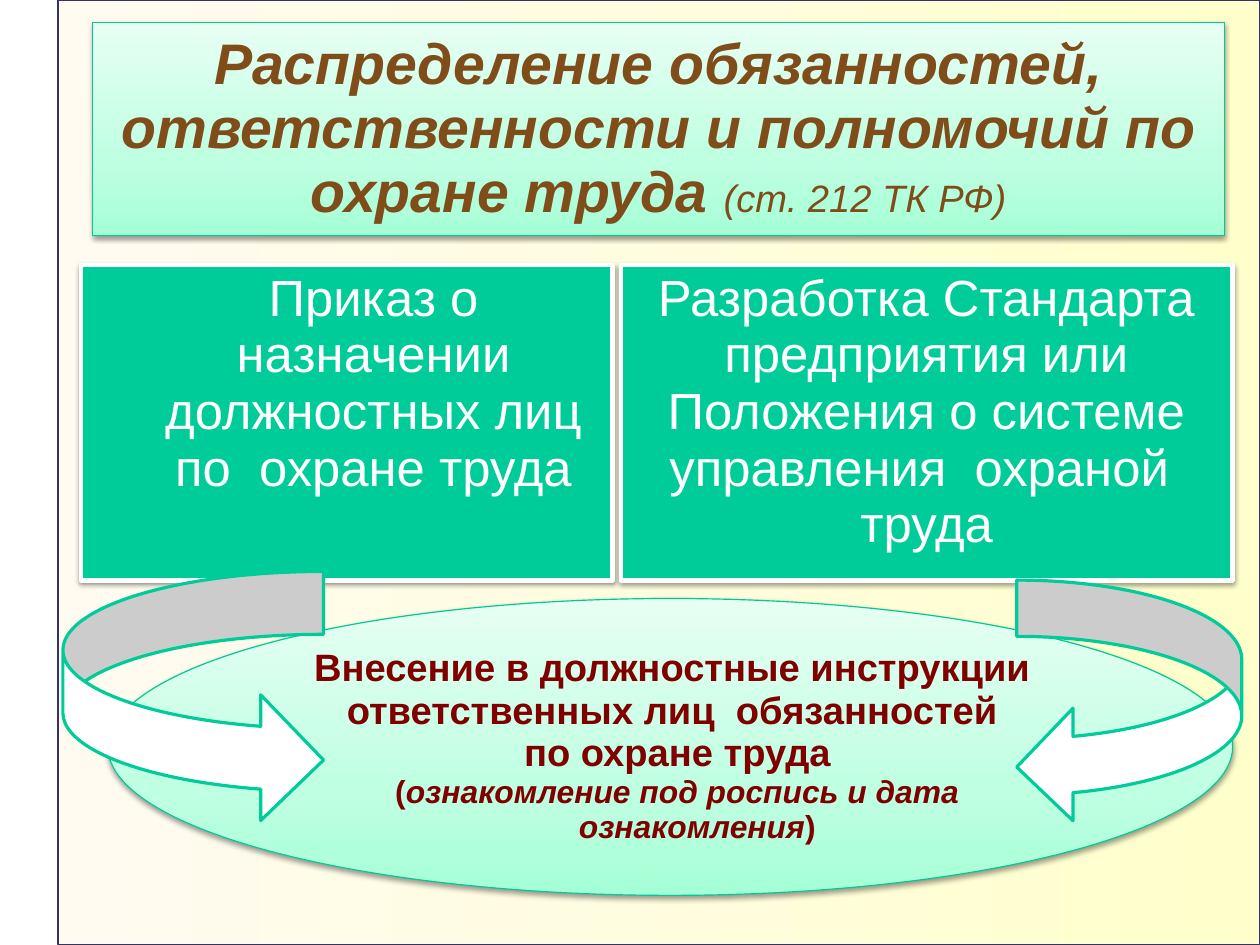
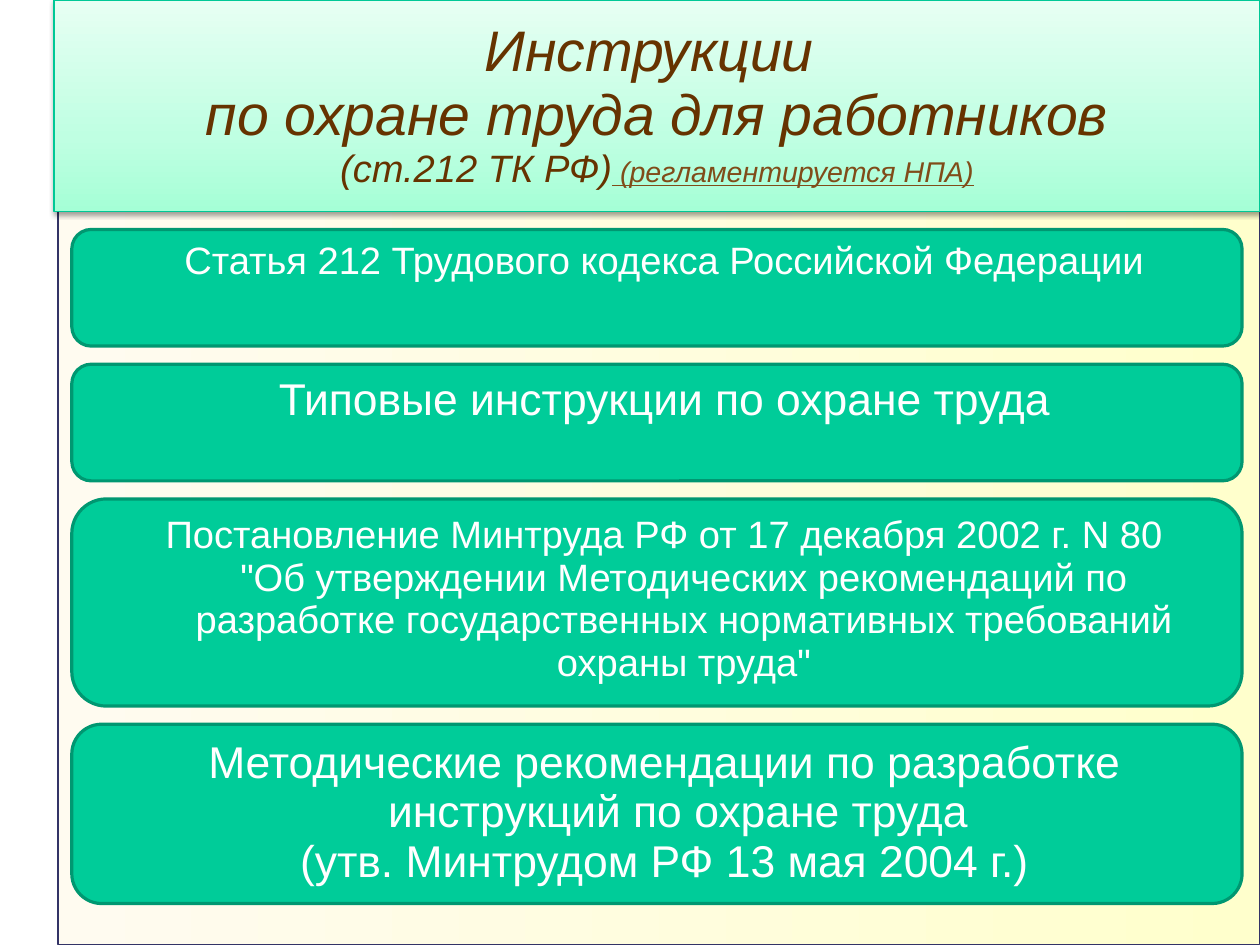
from dataclasses import dataclass

from lxml.etree import SubElement
from pptx import Presentation
from pptx.dml.color import RGBColor
from pptx.enum.shapes import MSO_SHAPE as Shape
from pptx.enum.text import MSO_ANCHOR as Anchor, MSO_AUTO_SIZE as AutoSize, PP_ALIGN as Align
from pptx.oxml.ns import qn
from pptx.util import Pt

SLIDE_WIDTH, SLIDE_HEIGHT = 793.7, 595.28
FONT = "Arial"
LINE_SPACING = 0.93
GREEN, DARK_GREEN, MINT_EDGE = "00CC99", "009771", "00C896"
WHITE, NAVY, MAROON = "FFFFFF", "333366", "800000"
BROWN, DARK_BROWN = "804C19", "663300"
MINT = [(0, "A5FFD6"), (35, "BFFFE2"), (100, "E7FFF3")]
CREAM = [(0, "FFFBF0"), (100, "FFFFCC")]
HANGING = (34, -25)


@dataclass(frozen=True)
class Run:
    text: str
    size: float
    color: str
    bold: bool = False
    italic: bool = False
    underline: bool = False


def rgb(color):
    return RGBColor.from_string(color)


def place(shape, left, top, width, height):
    shape.left, shape.top = Pt(left), Pt(top)
    shape.width, shape.height = Pt(width), Pt(height)


def fill_gradient(shape, stops, angle):
    """Fill with (percent, colour) stops; the angle runs counter-clockwise."""
    shape.fill.gradient()
    shape.fill.gradient_angle = angle
    stop_list = next(shape.element.iter(qn("a:gsLst")))
    for old_stop in list(stop_list):
        stop_list.remove(old_stop)
    for percent, color in stops:
        stop = SubElement(stop_list, qn("a:gs"), pos=str(percent * 1000))
        SubElement(stop, qn("a:srgbClr"), val=color)


def outline(shape, color, width):
    shape.line.color.rgb = rgb(color)
    shape.line.width = Pt(width)


def cast_shadow(shape):
    shape.shadow.inherit = False
    effects = next(shape.element.iter(qn("a:effectLst")))
    shadow = SubElement(effects, qn("a:outerShdw"), blurRad=str(Pt(3.1)),
                        dist=str(Pt(1.6)), dir="5400000", rotWithShape="0")
    black = SubElement(shadow, qn("a:srgbClr"), val="000000")
    SubElement(black, qn("a:alpha"), val="38000")


def style_mint(shape):
    fill_gradient(shape, MINT, 90)
    outline(shape, MINT_EDGE, 0.75)
    cast_shadow(shape)


def add_run(paragraph, run):
    for index, line in enumerate(run.text.split("\n")):
        if index:
            paragraph.add_line_break()
        if not line:
            continue
        part = paragraph.add_run()
        part.text = line
        font = part.font
        font.name, font.size = FONT, Pt(run.size)
        font.color.rgb = rgb(run.color)
        font.bold, font.italic, font.underline = run.bold, run.italic, run.underline


def write(shape, paragraphs, anchor=Anchor.TOP, indent=(0, 0), spacing=0):
    """Write lists of runs, one list a paragraph; indent is (left, first line)."""
    frame = shape.text_frame
    frame.word_wrap = True
    frame.vertical_anchor = anchor
    for index, runs in enumerate(paragraphs):
        paragraph = frame.add_paragraph() if index else frame.paragraphs[0]
        paragraph.alignment = Align.CENTER
        paragraph.line_spacing = LINE_SPACING
        paragraph.space_before = paragraph.space_after = Pt(spacing)
        properties = paragraph._p.get_or_add_pPr()
        properties.set("marL", str(Pt(indent[0])))
        properties.set("indent", str(Pt(indent[1])))
        for run in runs:
            add_run(paragraph, run)


def add_title(slide, box, runs):
    title = slide.shapes.title
    place(title, *box)
    style_mint(title)
    frame = title.text_frame
    frame.auto_size = AutoSize.NONE
    frame.margin_left = frame.margin_right = frame.margin_top = frame.margin_bottom = 0
    write(title, [runs], Anchor.MIDDLE)


def add_plain(slide, kind, box, fill, line, line_width):
    shape = slide.shapes.add_shape(kind, *map(Pt, box))
    shape.shadow.inherit = False
    shape.fill.solid()
    shape.fill.fore_color.rgb = rgb(fill)
    outline(shape, line, line_width)
    return shape


def add_duty_box(slide, left, width, text, indent):
    box = add_plain(slide, Shape.RECTANGLE, (left, 167, width, 198.5), GREEN, WHITE, 3)
    cast_shadow(box)
    write(box, [[Run(text, 32, WHITE)]], indent=indent)


def add_master_panel(prs, slide):
    """Put the cream panel on the master, behind everything else."""
    left = 36.5
    panel = add_plain(slide, Shape.RECTANGLE,
                      (left, 0, SLIDE_WIDTH - left, SLIDE_HEIGHT), WHITE, NAVY, 0.75)
    fill_gradient(panel, CREAM, 0)
    prs.slide_master.shapes.element.insert(2, panel.element)


def build_duties(slide):
    add_title(slide, (58.3, 14.2, 713, 134.4), [
        Run("Распределение обязанностей, ответственности и полномочий по охране труда ",
            36, BROWN, bold=True, italic=True),
        Run("(ст. 212 ТК РФ)", 24, BROWN, italic=True),
    ])
    add_duty_box(slide, 51, 334.8, "Приказ о назначении должностных лиц по  охране труда", (34, 0))
    add_duty_box(slide, 391.2, 385, "Разработка Стандарта предприятия или Положения "
                 "о системе управления  охраной  труда", (0, 0))

    outcome = slide.shapes.add_shape(Shape.OVAL, Pt(68), Pt(377), Pt(708.5), Pt(187))
    style_mint(outcome)
    headings = ("Внесение в должностные инструкции ",
                "ответственных лиц  обязанностей ", "по охране труда")
    write(outcome, [[Run(text, 24, MAROON, bold=True)] for text in headings] + [[
        Run("(", 20, MAROON, bold=True),
        Run("ознакомление под роспись и дата ознакомления", 20, MAROON, bold=True, italic=True),
        Run(")", 20, MAROON, bold=True),
    ]], indent=HANGING)

    for kind, box in ((Shape.CURVED_LEFT_ARROW, (640.5, 365.4, 141.8, 153.2)),
                      (Shape.CURVED_RIGHT_ARROW, (39.6, 360, 164.2, 158.4))):
        add_plain(slide, kind, box, WHITE, GREEN, 2)


def build_instructions(slide):
    add_title(slide, (34, 0, SLIDE_WIDTH - 34, 133.2), [
        Run("Инструкции \nпо охране труда для работников\n", 36, DARK_BROWN, italic=True),
        Run("(ст.212 ТК РФ)", 24, DARK_BROWN, italic=True),
        Run(" (регламентируется НПА)", 18, BROWN, italic=True, underline=True),
    ])
    documents = [
        (73.5, 24, 5.5, ["Статья 212 Трудового кодекса Российской Федерации"]),
        (73.5, 28, 5.5, ["Типовые инструкции по охране труда"]),
        (130.5, 24, 5.5, ["Постановление Минтруда РФ от 17 декабря 2002 г. N 80\n"
                          '"Об утверждении Методических рекомендаций по разработке '
                          'государственных нормативных требований охраны труда"']),
        (113, 28, 0, ["Методические рекомендации по разработке инструкций по охране труда ",
                      "(утв. Минтрудом РФ 13 мая 2004 г.)"]),
    ]
    top, gap = 144.5, 11.4
    for height, size, spacing, lines in documents:
        card = add_plain(slide, Shape.ROUNDED_RECTANGLE, (45.2, top, 737.2, height),
                         GREEN, DARK_GREEN, 2)
        write(card, [[Run(line, size, WHITE)] for line in lines],
              indent=HANGING, spacing=spacing)
        top += height + gap


def main():
    prs = Presentation()
    prs.slide_width, prs.slide_height = Pt(SLIDE_WIDTH), Pt(SLIDE_HEIGHT)
    title_only = prs.slide_layouts[5]
    duties, instructions = (prs.slides.add_slide(title_only) for _ in range(2))
    add_master_panel(prs, duties)
    build_duties(duties)
    build_instructions(instructions)
    prs.save("out.pptx")


if __name__ == "__main__":
    main()
